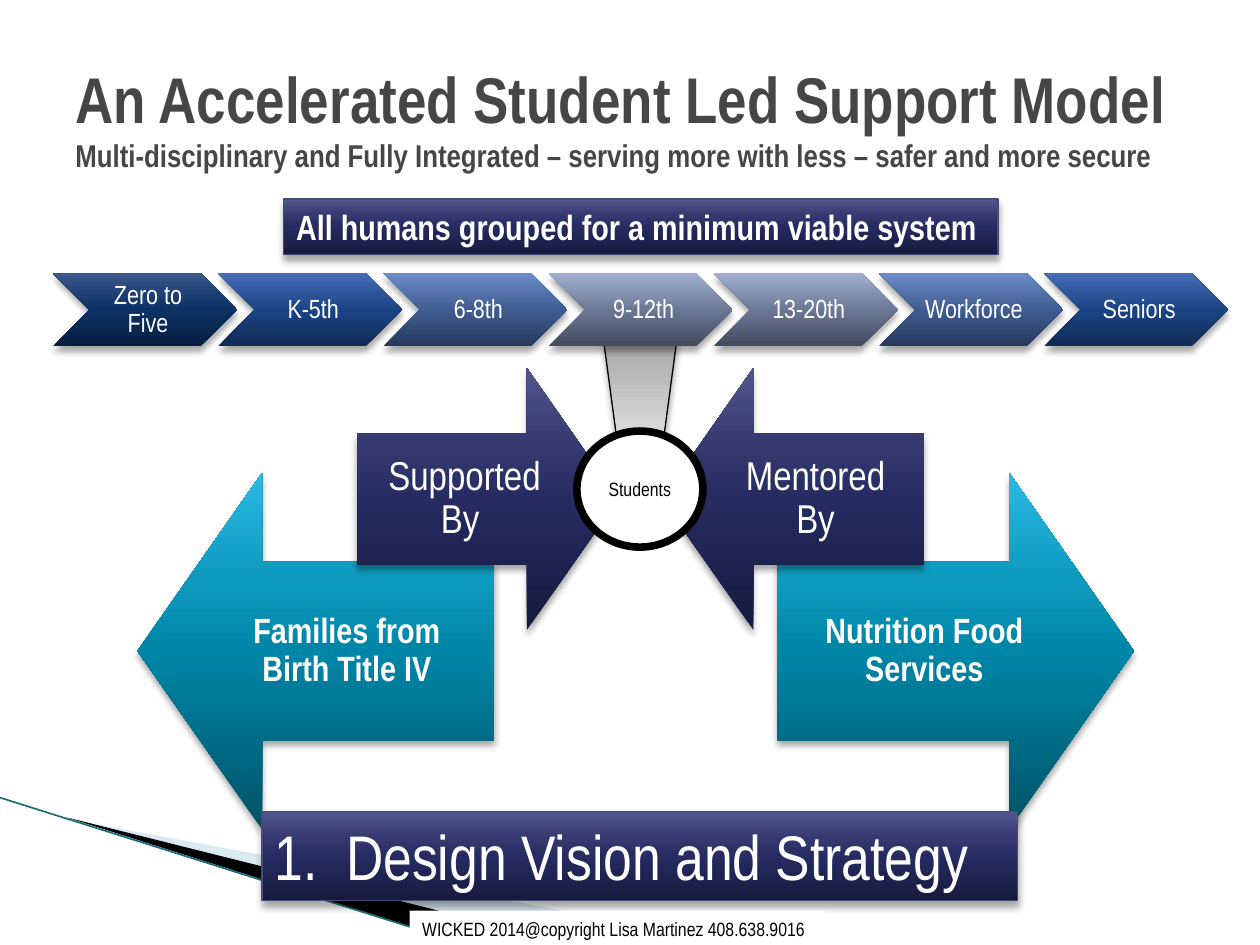
from lxml import etree
from pptx import Presentation
from pptx.dml.color import RGBColor
from pptx.enum import shapes, text
from pptx.oxml.ns import qn
from pptx.util import Cm, Pt

FONT = "Arial Narrow"
WHITE = RGBColor(0xFF, 0xFF, 0xFF)
BLACK = RGBColor(0, 0, 0)
TITLE_GREY = RGBColor(0x46, 0x46, 0x46)
PALE_BLUE = RGBColor(0xA0, 0xCB, 0xDC)
SWOOSH_LINE = RGBColor(0x1A, 0x6C, 0x80)
INDIGO_EDGE = RGBColor(0x47, 0x4B, 0x78)


def gradient(positions, *colours):
    return list(zip(positions, map(RGBColor.from_string, colours)))


STEPS = (0, 50, 70, 100)
INDIGO = gradient(STEPS, "171A3D", "262B61", "353970", "51568D")
TEAL = gradient(STEPS, "005367", "0086A7", "0E9ABE", "2CB9E3")
NAVY = gradient(STEPS, "061E40", "0C3164", "1C3E72", "3D598D")
ROYAL = gradient(STEPS, "0F2A54", "1B4485", "2B5397", "466EB8")
STEEL = gradient(STEPS, "26395B", "405C91", "516FA6", "6C8CCA")
SLATE = gradient(STEPS, "424A5D", "6B7895", "818FAD", "A1B0D2")
SILVER = gradient((0, 65, 100), "A7A7A7", "D8D8D8", "E4E4E4")

STAGES = [("Zero to Five", NAVY), ("K-5th", ROYAL), ("6-8th", STEEL),
          ("9-12th", SLATE), ("13-20th", SLATE), ("Workforce", STEEL),
          ("Seniors", ROYAL)]


def add_colour(parent, colour, alpha):
    node = etree.SubElement(parent, qn("a:srgbClr"), val=str(colour))
    if alpha < 100:
        etree.SubElement(node, qn("a:alpha"), val=str(alpha * 1000))


def paint_gradient(shape, stops):
    """Fill from bottom to top with the given stops."""
    shape.fill.gradient()
    shape.fill.gradient_angle = 90
    stop_list = shape.element.spPr.find(".//" + qn("a:gsLst"))
    for old in list(stop_list):
        stop_list.remove(old)
    for position, colour in stops:
        stop = etree.SubElement(stop_list, qn("a:gs"), pos=str(position * 1000))
        add_colour(stop, colour, 100)


def add_soft_shadow(shape):
    effects = shape.element.spPr.find(qn("a:effectLst"))
    shadow = etree.SubElement(effects, qn("a:outerShdw"), blurRad=str(Pt(4)),
                              dist=str(Pt(3)), dir="5400000", rotWithShape="0")
    add_colour(shadow, BLACK, 35)


def add_block(page, kind, place, fill, edge=None, edge_width=0.75):
    """Add a preset shape; a list of stops as fill also gives it a shadow."""
    shape = page.shapes.add_shape(kind, *map(Cm, place))
    shape.shadow.inherit = False
    if isinstance(fill, list):
        paint_gradient(shape, fill)
        add_soft_shadow(shape)
    else:
        shape.fill.solid()
        shape.fill.fore_color.rgb = fill
    if edge is None:
        shape.line.fill.background()
    else:
        shape.line.color.rgb = edge
        shape.line.width = Pt(edge_width)
    return shape


def style_span(span, size, colour, bold=False):
    span.font.name = FONT
    span.font.size = Pt(size)
    span.font.bold = bold
    span.font.color.rgb = colour


def write(shape, words, size, colour=WHITE, bold=False, insets=(0.25, 0.13, 0.25, 0.13),
          centred=True, spacing=None, tab=None):
    frame = shape.text_frame
    frame.word_wrap = True
    (frame.margin_left, frame.margin_top,
     frame.margin_right, frame.margin_bottom) = map(Cm, insets)
    frame.vertical_anchor = (text.MSO_ANCHOR.MIDDLE if centred
                             else text.MSO_ANCHOR.TOP)
    frame.text = words
    para = frame.paragraphs[0]
    para.alignment = text.PP_ALIGN.CENTER if centred else text.PP_ALIGN.LEFT
    if spacing:
        para.line_spacing = spacing
    if tab:
        tabs = etree.SubElement(para._p.get_or_add_pPr(), qn("a:tabLst"))
        etree.SubElement(tabs, qn("a:tab"), pos=str(Cm(tab)), algn="l")
    for span in para.runs:
        style_span(span, size, colour, bold)


def add_wedge(page, points, colour, alpha=100):
    corners = [(Cm(x), Cm(y)) for x, y in points]
    builder = page.shapes.build_freeform(*corners[0], scale=1.0)
    builder.add_line_segments(corners[1:], close=True)
    wedge = builder.convert_to_shape()
    wedge.shadow.inherit = False
    wedge.line.fill.background()
    wedge.fill.solid()
    wedge.fill.fore_color.rgb = colour
    if alpha < 100:
        node = wedge.element.spPr.find(qn("a:solidFill"))[0]
        etree.SubElement(node, qn("a:alpha"), val=str(alpha * 1000))


def add_swoosh(page):
    add_wedge(page, [(1.4, 16.52), (15.11, 19.05), (11.58, 19.05)], PALE_BLUE, 40)
    add_wedge(page, [(1.35, 16.48), (11.6, 19.05), (9.45, 19.05)], BLACK)
    line = page.shapes.add_connector(shapes.MSO_CONNECTOR.STRAIGHT,
                                     Cm(0), Cm(16.08), Cm(9.42), Cm(19.05))
    line.line.color.rgb = SWOOSH_LINE
    line.line.width = Pt(0.95)
    etree.SubElement(line.element.spPr, qn("a:effectLst"))


def add_arrow(page, kind, left, top, side, fill, words, size, inset, bold=False):
    arrow = add_block(page, kind, (left, top, side, side), fill)
    arrow.adjustments[0] = 0.5
    arrow.adjustments[1] = 0.35
    write(arrow, words, size, bold=bold, insets=(inset,) * 4, spacing=0.9)


def add_title(page):
    box = page.shapes.add_textbox(Cm(1.27), Cm(0.76), Cm(22.86), Cm(3.18))
    write(box, "An Accelerated Student Led Support Model\v"
          "Multi-disciplinary and Fully Integrated – serving more with less"
          " – safer and more secure", 18, TITLE_GREY, bold=True, centred=False)
    box.text_frame.vertical_anchor = text.MSO_ANCHOR.MIDDLE
    box.text_frame.paragraphs[0].runs[0].font.size = Pt(36.9)


def add_stages(page):
    for index, (stage, fill) in enumerate(STAGES):
        chevron = add_block(page, shapes.MSO_SHAPE.CHEVRON,
                            (1.07 + 3.33 * index, 5.51, 3.71, 1.47), fill)
        write(chevron, stage, 15, insets=(0.15, 0.05, 0.03, 0.05), spacing=0.9)


def main():
    deck = Presentation()
    deck.slide_width, deck.slide_height = Cm(25.4), Cm(19.05)
    page = deck.slides.add_slide(deck.slide_layouts[6])
    kinds = shapes.MSO_SHAPE

    add_swoosh(page)
    funnel = add_block(page, kinds.TRAPEZOID, (12.17, 6.88, 1.47, 2.74), SILVER, BLACK)
    funnel.rotation = 180
    add_arrow(page, kinds.LEFT_ARROW, 2.77, 9.53, 7.19, TEAL,
              "Families from Birth Title IV", 20, 0.41, bold=True)
    add_arrow(page, kinds.RIGHT_ARROW, 15.67, 9.53, 7.19, TEAL,
              "Nutrition Food Services", 20, 0.41, bold=True)
    add_title(page)
    add_arrow(page, kinds.RIGHT_ARROW, 7.19, 7.42, 5.28, INDIGO,
              "Supported By ", 23, 0.46)
    add_arrow(page, kinds.LEFT_ARROW, 13.34, 7.42, 5.28, INDIGO,
              "Mentored By", 23, 0.46)
    add_stages(page)

    strategy = add_block(page, kinds.RECTANGLE, (5.28, 16.36, 15.24, 1.8),
                         INDIGO, INDIGO_EDGE)
    write(strategy, "1.\tDesign Vision and Strategy", 36, centred=False, tab=1.45)
    footer = add_block(page, kinds.RECTANGLE, (8.26, 18.36, 8.38, 0.69), WHITE)
    write(footer, "WICKED 2014@copyright Lisa Martinez 408.638.9016", 11, BLACK,
          centred=False)
    banner = add_block(page, kinds.RECTANGLE, (5.72, 4.01, 14.4, 1.12),
                       INDIGO, INDIGO_EDGE)
    write(banner, "All humans grouped for a minimum viable system", 20, bold=True,
          centred=False)
    hub = add_block(page, kinds.OVAL, (11.63, 8.69, 2.54, 2.34), WHITE, BLACK, 4.33)
    write(hub, "Students", 11, BLACK, insets=(0, 0, 0, 0))

    deck.save("out.pptx")


if __name__ == "__main__":
    main()
